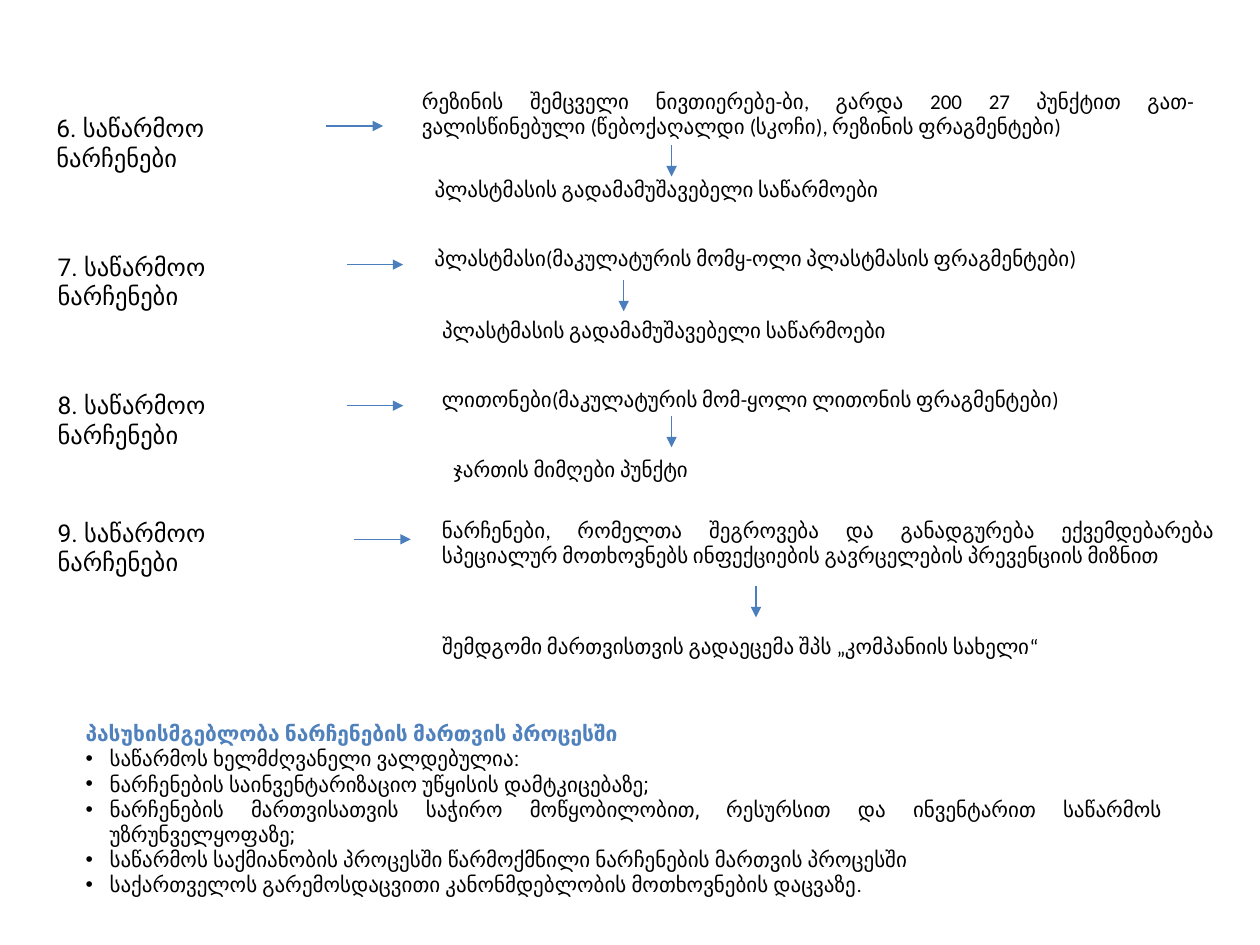
"""Build the slide on production waste routes and waste management duties."""
from dataclasses import dataclass

from lxml import etree
from pptx import Presentation
from pptx.dml.color import RGBColor
from pptx.enum.shapes import MSO_CONNECTOR
from pptx.enum.text import MSO_ANCHOR, MSO_AUTO_SIZE, PP_ALIGN
from pptx.oxml.ns import qn
from pptx.slide import Slide
from pptx.text.text import TextFrame
from pptx.util import Inches, Pt

STRAIGHT = MSO_CONNECTOR.STRAIGHT
TOP, MIDDLE = MSO_ANCHOR.TOP, MSO_ANCHOR.MIDDLE
FIT_SHAPE = MSO_AUTO_SIZE.SHAPE_TO_FIT_TEXT
LEFT, JUSTIFY = PP_ALIGN.LEFT, PP_ALIGN.JUSTIFY
COLORS = {"text": "000000", "heading": "4F81BD", "arrow": "4B7EBC"}
ARROW_ACROSS, ARROW_DOWN = 0.45, 0.25
BULLET_INDENT = 0.19


@dataclass
class Text:
    """A text with its position and height."""
    text: str
    left: float
    top: float
    height: float = 0.3


@dataclass
class Route:
    """A kind of waste, its contents and the place it goes to."""
    label: Text
    waste: Text
    target: Text
    across: tuple[float, float]
    down: tuple[float, float]


PLASTIC_PLANTS = "პლასტმასის გადამამუშავებელი საწარმოები"
ROUTES = [
    Route(Text("6. საწარმოო ნარჩენები", 0.35, 0.85),
          Text("რეზინის შემცველი ნივთიერებე-ბი, გარდა 200 27 პუნქტით "
               "გათ-ვალისწინებული (წებოქაღალდი (სკოჩი), რეზინის ფრაგმენტები)",
               3.25, 0.65, 0.5),
          Text(PLASTIC_PLANTS, 3.35, 1.35), (2.59, 1), (5.33, 1.15)),
    Route(Text("7. საწარმოო ნარჩენები", 0.36, 1.95),
          Text("პლასტმასი(მაკულატურის მომყ-ოლი პლასტმასის ფრაგმენტები)", 3.35, 1.9),
          Text(PLASTIC_PLANTS, 3.41, 2.47), (2.75, 2.1), (4.95, 2.22)),
    Route(Text("8. საწარმოო ნარჩენები", 0.36, 3.05),
          Text("ლითონები(მაკულატურის მომ-ყოლი ლითონის ფრაგმენტები)", 3.41, 3.02),
          Text("ჯართის მიმღები პუნქტი", 3.5, 3.57), (2.75, 3.22), (5.33, 3.3)),
    Route(Text("9. საწარმოო ნარჩენები", 0.36, 4.06),
          Text("ნარჩენები, რომელთა შეგროვება და განადგურება ექვემდებარება სპეციალურ "
               "მოთხოვნებს ინფექციების გავრცელების პრევენციის მიზნით", 3.41, 4.06, 0.5),
          Text("შემდგომი მართვისთვის გადაეცემა შპს „კომპანიის სახელი“", 3.41, 4.98),
          (2.81, 4.28), (6, 4.65)),
]
DUTIES = [
    "პასუხისმგებლობა ნარჩენების მართვის პროცესში",
    "საწარმოს ხელმძღვანელი ვალდებულია:",
    "ნარჩენების საინვენტარიზაციო უწყისის დამტკიცებაზე;",
    "ნარჩენების მართვისათვის საჭირო მოწყობილობით, რესურსით და ინვენტარით "
    "საწარმოს უზრუნველყოფაზე;",
    "საწარმოს საქმიანობის პროცესში წარმოქმნილი ნარჩენების მართვის პროცესში",
    "საქართველოს გარემოსდაცვითი კანონმდებლობის მოთხოვნების დაცვაზე.",
]


def format_text(tf: TextFrame, font: str, size: int, align: PP_ALIGN) -> None:
    """Give every paragraph and run of a frame the same look."""
    tf.word_wrap = True
    tf.auto_size = FIT_SHAPE
    for p in tf.paragraphs:
        p.alignment = align
        p.space_before = Pt(0)
        for r in p.runs:
            r.font.name = font
            r.font.size = Pt(size)
            r.font.color.rgb = RGBColor.from_string(COLORS["text"])


def add_text(s: Slide, item: Text, width: float, font: str, size: int,
             align: PP_ALIGN, anchor: MSO_ANCHOR) -> None:
    """Add a text box."""
    sp = s.shapes.add_textbox(Inches(item.left), Inches(item.top),
                              Inches(width), Inches(item.height))
    sp.text_frame.text = item.text
    sp.text_frame.vertical_anchor = anchor
    format_text(sp.text_frame, font, size, align)


def add_arrow(s: Slide, start: tuple[float, float], dx: float, dy: float) -> None:
    """Add a thin arrow from a start point."""
    x, y = start
    sp = s.shapes.add_connector(STRAIGHT, Inches(x), Inches(y),
                                Inches(x + dx), Inches(y + dy))
    sp.line.color.rgb = RGBColor.from_string(COLORS["arrow"])
    sp.line.width = Pt(0.75)
    etree.SubElement(sp.line._get_or_add_ln(), qn("a:tailEnd"), type="triangle")
    etree.SubElement(sp._element.spPr, qn("a:effectLst"))


def add_route(s: Slide, route: Route) -> None:
    """Draw one waste route with its two arrows."""
    add_text(s, route.label, 2.23, "Roboto", 14, LEFT, TOP)
    add_arrow(s, route.across, ARROW_ACROSS, 0)
    add_text(s, route.waste, 6.33, "Calibri", 12, JUSTIFY, MIDDLE)
    add_text(s, route.target, 5.75, "Calibri", 12, JUSTIFY, MIDDLE)
    add_arrow(s, route.down, 0, ARROW_DOWN)


def fill_duties(s: Slide) -> None:
    """Fill the body placeholder with a heading and a bulleted list."""
    sp = s.placeholders[1]
    sp.left, sp.top = Inches(0.58), Inches(5.67)
    sp.width, sp.height = Inches(8.75), Inches(1.51)
    tf = sp.text_frame
    tf.text = "\n".join(DUTIES)
    format_text(tf, "Roboto", 12, JUSTIFY)
    heading, *duties = tf.paragraphs
    heading.alignment = LEFT
    heading.runs[0].font.bold = True
    heading.runs[0].font.color.rgb = RGBColor.from_string(COLORS["heading"])
    for p, indent in [(heading, 0), *((p, BULLET_INDENT) for p in duties)]:
        pPr = p._p.get_or_add_pPr()
        pPr.set("marL", str(Inches(indent)))
        pPr.set("indent", str(-Inches(indent)))
        if indent:
            etree.SubElement(pPr, qn("a:buFont"), typeface="Arial")
            etree.SubElement(pPr, qn("a:buChar"), char="•")
        else:
            etree.SubElement(pPr, qn("a:buNone"))


def main() -> None:
    """Build and save the presentation."""
    prs = Presentation()
    prs.slide_width, prs.slide_height = Inches(10), Inches(7.5)
    s = prs.slides.add_slide(prs.slide_layouts[1])
    title = s.shapes.title.element
    title.getparent().remove(title)
    fill_duties(s)
    for route in ROUTES:
        add_route(s, route)
    prs.save("out.pptx")


if __name__ == "__main__":
    main()
